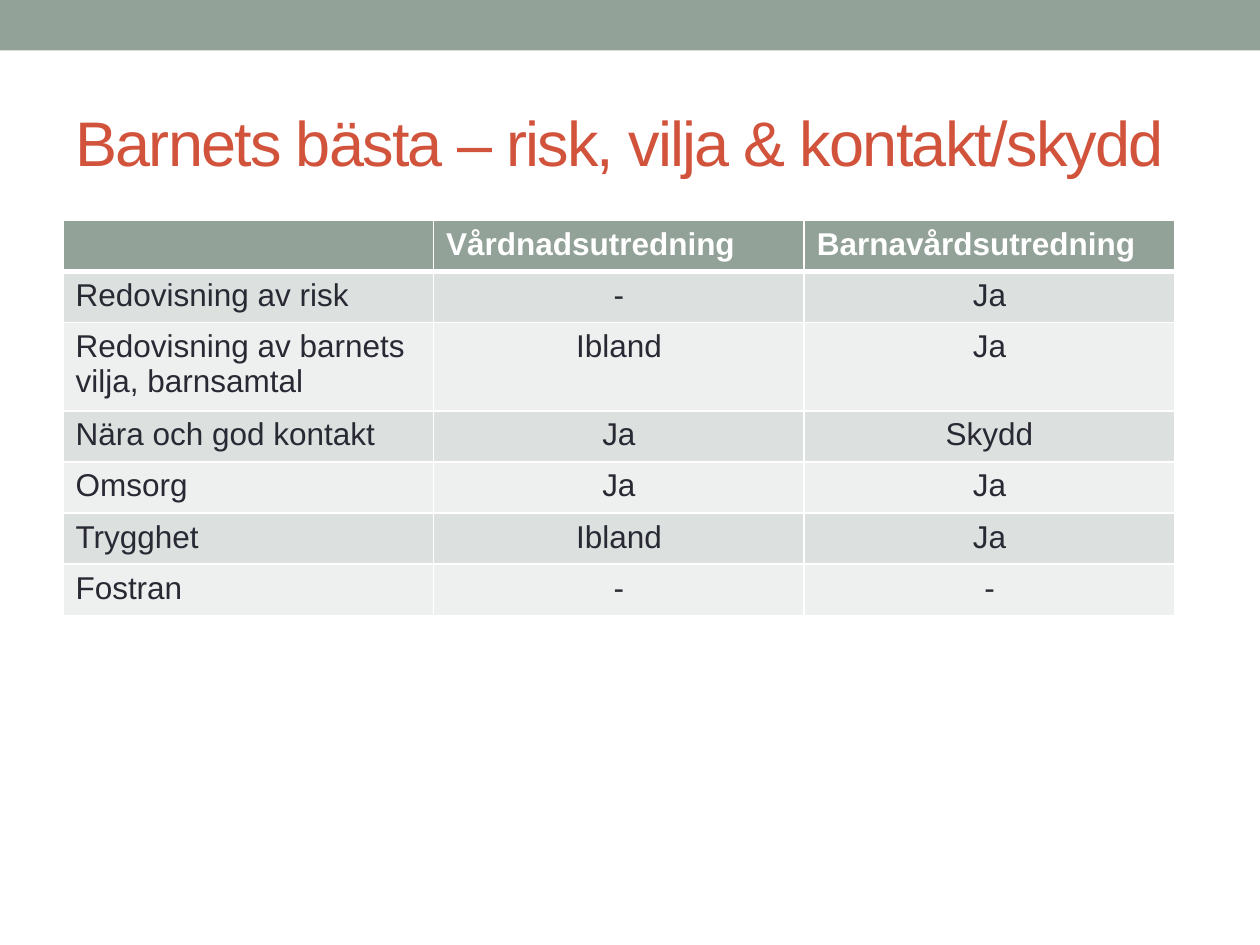
from lxml import etree
from pptx import Presentation
from pptx.dml.color import RGBColor
from pptx.enum.shapes import MSO_SHAPE
from pptx.enum.text import MSO_ANCHOR, PP_ALIGN
from pptx.oxml.ns import qn
from pptx.util import Pt

RECTANGLE = MSO_SHAPE.RECTANGLE
MIDDLE = MSO_ANCHOR.MIDDLE
LEFT, CENTER = PP_ALIGN.LEFT, PP_ALIGN.CENTER

SAGE, RUST, INK, WHITE = "93A299", "D2533C", "292934", "FFFFFF"
BANDS = ("DCE0DE", "EEF0EF")
COLUMN_WIDTH, ROW_HEIGHT = 211.8, 29.2
ROWS = [
    ("", "Vårdnadsutredning", "Barnavårdsutredning"),
    ("Redovisning av risk", "-", "Ja"),
    ("Redovisning av barnets vilja, barnsamtal", "Ibland", "Ja"),
    ("Nära och god kontakt", "Ja", "Skydd"),
    ("Omsorg", "Ja", "Ja"),
    ("Trygghet", "Ibland", "Ja"),
    ("Fostran", "-", "-"),
]


def rgb(hex_color):
    return RGBColor.from_string(hex_color)


def write(frame, text, size=18, color=INK, bold=False, align=LEFT, spacing=0):
    """Fill the frame with one formatted run; spacing is in points."""
    paragraph = frame.paragraphs[0]
    paragraph.alignment = align
    run = paragraph.add_run()
    run.text = text
    run.font.name = "Arial"
    run.font.size = Pt(size)
    run.font.bold = bold
    run.font.color.rgb = rgb(color)
    if spacing:
        run.font._element.set("spc", str(spacing * 100))


def add_band(slide, left, top, width, height, color):
    band = slide.shapes.add_shape(RECTANGLE, Pt(left), Pt(top), Pt(width), Pt(height))
    band.shadow.inherit = False
    band.fill.solid()
    band.fill.fore_color.rgb = rgb(color)
    band.line.fill.background()


def add_title(slide, text, left, top, width, height):
    title = slide.shapes.add_textbox(Pt(left), Pt(top), Pt(width), Pt(height))
    frame = title.text_frame
    frame.word_wrap = True
    frame.vertical_anchor = MIDDLE
    write(frame, text, size=36, color=RUST, spacing=-1)


def set_borders(cell, **widths):
    """Draw white borders, 1 pt unless a side (L, R, T, B) is given a width."""
    properties = cell._tc.get_or_add_tcPr()
    for side in "LRTB":
        line = etree.SubElement(properties, qn(f"a:ln{side}"), w=str(Pt(widths.get(side, 1))))
        fill = etree.SubElement(line, qn("a:solidFill"))
        etree.SubElement(fill, qn("a:srgbClr"), val=WHITE)


def add_comparison(slide, left, top):
    columns = len(ROWS[0])
    table = slide.shapes.add_table(
        len(ROWS), columns, Pt(left), Pt(top),
        Pt(columns * COLUMN_WIDTH), Pt(len(ROWS) * ROW_HEIGHT),
    ).table
    for column in table.columns:
        column.width = Pt(COLUMN_WIDTH)
    for r, texts in enumerate(ROWS):
        table.rows[r].height = Pt(ROW_HEIGHT)
        header = r == 0
        for c, text in enumerate(texts):
            cell = table.cell(r, c)
            set_borders(cell, T=3 if r == 1 else 1, B=3 if header else 1)
            cell.fill.solid()
            cell.fill.fore_color.rgb = rgb(SAGE if header else BANDS[(r - 1) % 2])
            write(cell.text_frame, text, color=WHITE if header else INK, bold=header,
                  align=LEFT if header or c == 0 else CENTER)


def main():
    presentation = Presentation()
    presentation.slide_width, presentation.slide_height = Pt(720), Pt(540)
    slide = presentation.slides.add_slide(presentation.slide_layouts[6])
    add_band(slide, 0, 0, 720, 28.8, SAGE)
    add_title(slide, "Barnets bästa – risk, vilja & kontakt/skydd", 36, 42, 648, 78)
    add_comparison(slide, 36, 126)
    presentation.save("out.pptx")


if __name__ == "__main__":
    main()
